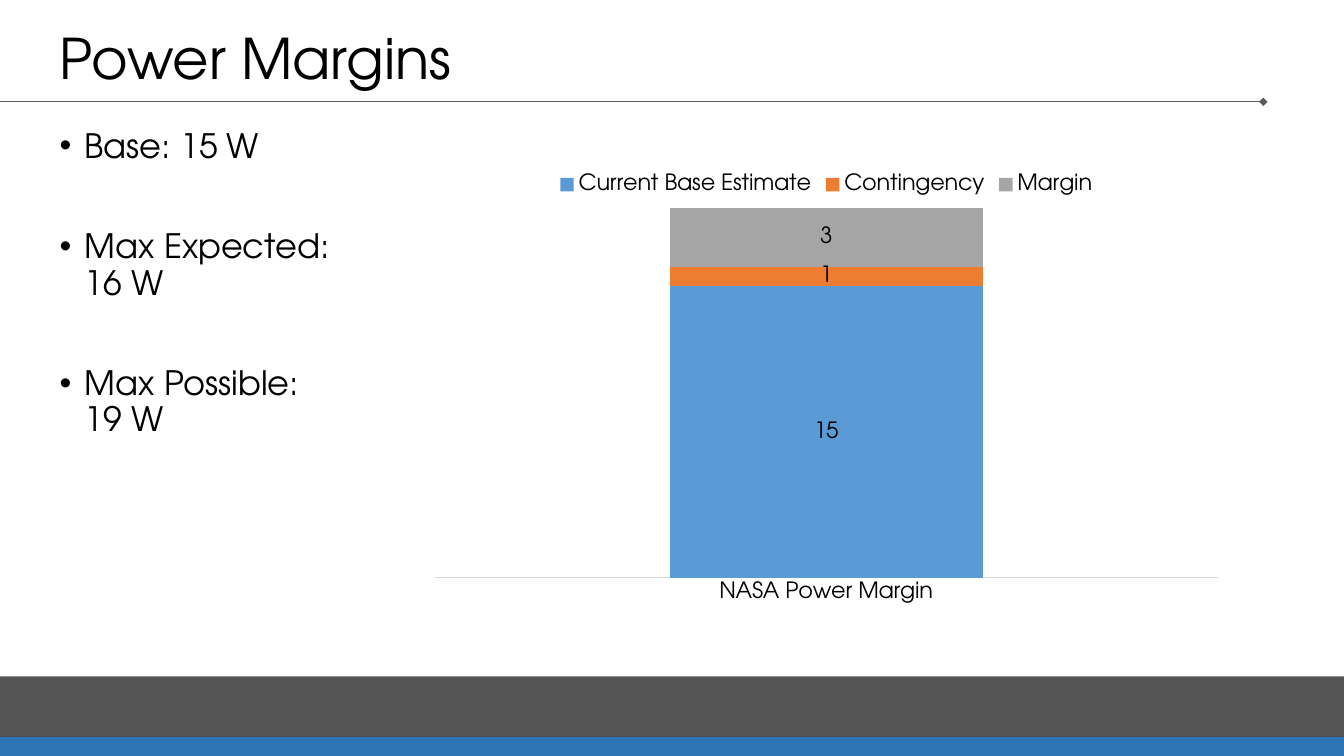
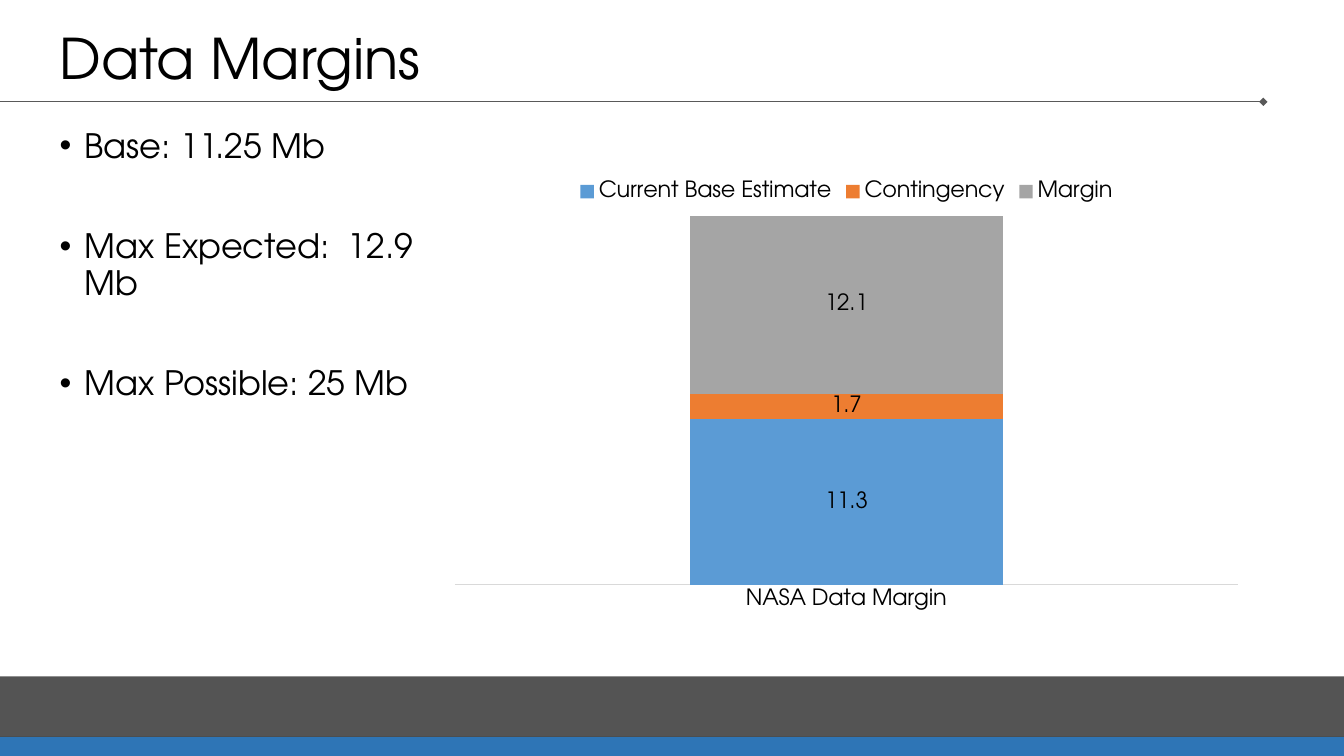
from lxml.etree import SubElement
from pptx import Presentation
from pptx.chart.data import CategoryChartData
from pptx.dml.color import RGBColor
from pptx.enum.chart import XL_CHART_TYPE as ChartType, XL_LEGEND_POSITION as LegendPosition
from pptx.enum.chart import XL_TICK_LABEL_POSITION as TickLabel, XL_TICK_MARK as TickMark
from pptx.enum.shapes import MSO_CONNECTOR as Connector, MSO_SHAPE as Shape
from pptx.enum.text import MSO_ANCHOR as Anchor, MSO_AUTO_SIZE as AutoSize, PP_ALIGN as Align
from pptx.oxml.ns import qn
from pptx.util import Inches, Pt

# Content
SERIES = [("Current Base Estimate", "5B9BD5"), ("Contingency", "ED7D31"), ("Margin", "A5A5A5")]
SLIDES = [
    {"title": "Power Margins",
     "bullets": ["Base: 15 W", "Max Expected: 16 W", "Max Possible: 19 W"],
     "body_width": 3.02,
     "chart_at": (4.15, 1.61),
     "category": "NASA Power Margin", "values": [15, 1, 3], "number_format": "#,##0"},
    {"title": "Data Margins",
     "bullets": ["Base: 11.25 Mb", "Max Expected:  12.9 Mb", "Max Possible: 25 Mb"],
     "body_width": 3.85,
     "chart_at": (4.35, 1.68),
     "category": "NASA Data Margin", "values": [11.3, 1.7, 12.1], "number_format": "#,##0.0"},
]

# Shared style
FONT = "TeX Gyre Adventor"
BLACK, RULE, BLUE, AXIS = "000000", "595959", "2E75B6", "D9D9D9"
WIDTH, HEIGHT = 13.33, 7.5
TITLE_BOX = (0.49, 0.13, 11.99, 0.83)
BODY_LEFT, BODY_TOP, BODY_HEIGHT = 0.49, 1.23, 4.34
CHART_SIZE = (8.09, 4.46)
BANDS = [(7.31, 0.2, BLUE, None), (6.71, 0.6, BLACK, 67)]  # top, height, colour, opacity %
BULLET_INDENT = Inches(0.25)


def color(value):
    return RGBColor.from_string(value)


def apply(target, values):
    for name, value in values.items():
        setattr(target, name, value)


def style_font(font, size):
    apply(font, {"name": FONT, "size": Pt(size), "bold": False})
    font.color.rgb = color(BLACK)


def place(shape, *box):
    apply(shape, dict(zip(("left", "top", "width", "height"), map(Inches, box))))


def add_rule(shapes):
    rule = shapes.add_connector(Connector.STRAIGHT, 0, Inches(1.01), Inches(12.53), Inches(1.01))
    rule.line.color.rgb = color(RULE)
    rule.line.width = Pt(1)
    SubElement(rule.line._get_or_add_ln(), qn("a:tailEnd"), type="diamond")
    SubElement(rule.element.spPr, qn("a:effectLst"))
    return rule


def add_band(shapes, top, height, fill, opacity):
    band = shapes.add_shape(Shape.RECTANGLE, 0, Inches(top), Inches(WIDTH), Inches(height))
    band.shadow.inherit = False
    band.fill.solid()
    band.fill.fore_color.rgb = color(fill)
    band.line.fill.background()
    if opacity:
        rgb = band.element.spPr.find(".//" + qn("a:srgbClr"))
        SubElement(rgb, qn("a:alpha"), val=str(opacity * 1000))
    return band


def decorate_layout(layout, slide):
    """Move the rule and bands from a slide to its layout, behind the placeholders."""
    parts = [add_rule(slide.shapes)] + [add_band(slide.shapes, *band) for band in BANDS]
    for position, part in enumerate(parts, start=2):
        layout.shapes.element.insert(position, part.element)


def fill_title(title, text):
    place(title, *TITLE_BOX)
    frame = title.text_frame
    frame.text = text
    apply(frame, {"vertical_anchor": Anchor.BOTTOM, "auto_size": AutoSize.NONE, "word_wrap": True})
    paragraph = frame.paragraphs[0]
    apply(paragraph, {"alignment": Align.LEFT, "line_spacing": 0.9})
    style_font(paragraph.runs[0].font, 40)


def fill_body(body, bullets, width):
    place(body, BODY_LEFT, BODY_TOP, width, BODY_HEIGHT)
    frame = body.text_frame
    frame.text = "\n".join(bullets)
    apply(frame, {"auto_size": AutoSize.NONE, "word_wrap": True})
    for index, paragraph in enumerate(frame.paragraphs):
        properties = paragraph._p.get_or_add_pPr()
        properties.set("marL", str(BULLET_INDENT))
        properties.set("indent", str(-BULLET_INDENT))
        apply(paragraph, {"line_spacing": 0.9, "space_before": Pt(46 if index else 0)})
        SubElement(properties, qn("a:buChar"), char="•")
        style_font(paragraph.runs[0].font, 24)


def add_margin_chart(slide, content):
    data = CategoryChartData(number_format=content["number_format"])
    data.categories = [content["category"]]
    for (name, _), value in zip(SERIES, content["values"]):
        data.add_series(name, [value])
    box = map(Inches, content["chart_at"] + CHART_SIZE)
    chart = slide.shapes.add_chart(ChartType.COLUMN_STACKED_100, *box, data).chart
    style_font(chart.font, 16)

    # Legend and axes
    apply(chart, {"has_title": False, "has_legend": True})
    apply(chart.legend, {"position": LegendPosition.TOP, "include_in_layout": False})
    style_font(chart.legend.font, 16)
    apply(chart.value_axis, {"visible": False, "has_major_gridlines": False})
    axis = chart.category_axis
    apply(axis, {"major_tick_mark": TickMark.NONE, "minor_tick_mark": TickMark.NONE,
                 "tick_label_position": TickLabel.NEXT_TO_AXIS})
    axis.format.line.color.rgb = color(AXIS)
    axis.format.line.width = Pt(0.75)
    style_font(axis.tick_labels.font, 16)

    # Stacked parts and their labels
    plot = chart.plots[0]
    apply(plot, {"gap_width": 150, "overlap": 100, "vary_by_categories": False})
    for series, (_, fill) in zip(plot.series, SERIES):
        series.format.fill.solid()
        series.format.fill.fore_color.rgb = color(fill)
        labels = series.data_labels
        apply(labels, {"show_value": True, "number_format": content["number_format"],
                       "number_format_is_linked": False})
        style_font(labels.font, 16)


def main():
    presentation = Presentation()
    apply(presentation, {"slide_width": Inches(WIDTH), "slide_height": Inches(HEIGHT)})
    layout = presentation.slide_layouts[1]
    for placeholder in list(layout.placeholders):
        if placeholder.placeholder_format.idx >= 10:
            layout.shapes.element.remove(placeholder.element)

    for index, content in enumerate(SLIDES):
        slide = presentation.slides.add_slide(layout)
        if index == 0:
            decorate_layout(layout, slide)
        fill_title(slide.shapes.title, content["title"])
        fill_body(slide.placeholders[1], content["bullets"], content["body_width"])
        add_margin_chart(slide, content)
    presentation.save("out.pptx")


if __name__ == "__main__":
    main()
